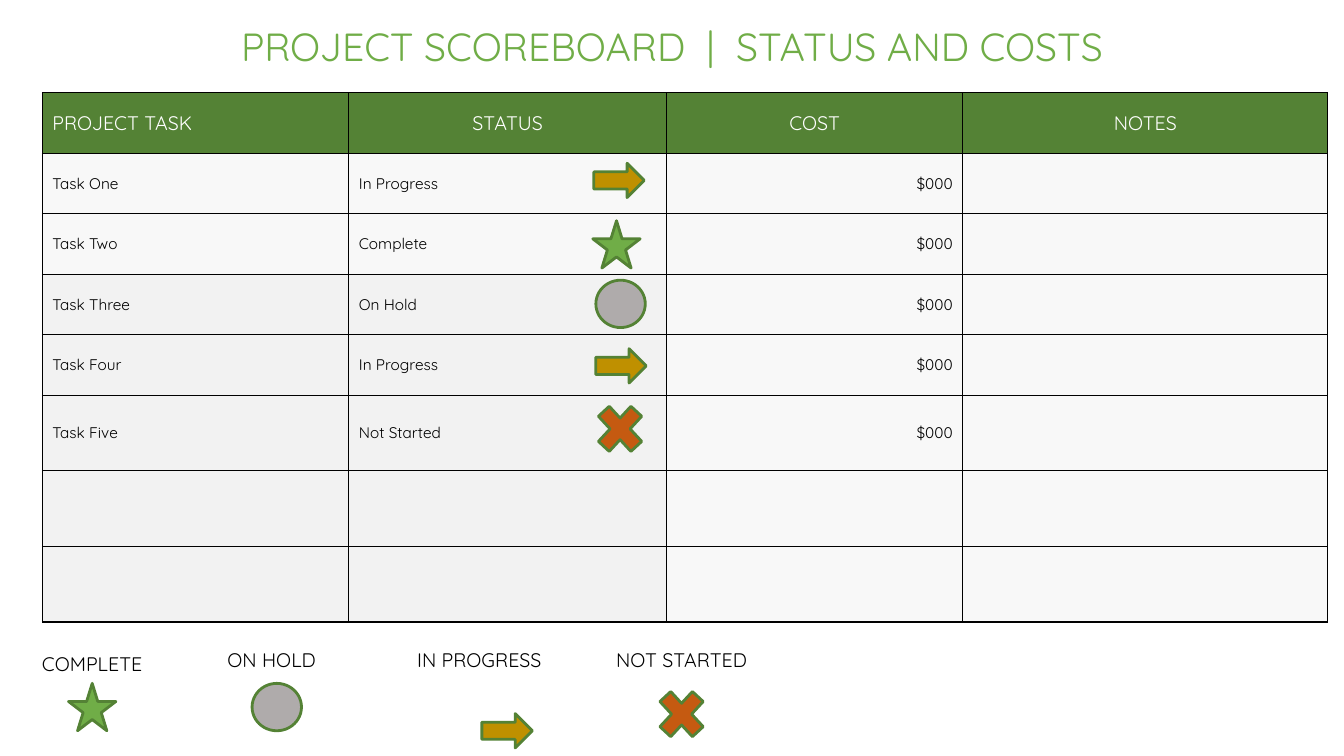
"""Build the project scoreboard slide with its task table and status legend."""
from dataclasses import dataclass
from typing import Any

from lxml.etree import SubElement
from pptx import Presentation
from pptx.dml.color import RGBColor
from pptx.enum.shapes import MSO_SHAPE
from pptx.enum.text import MSO_ANCHOR, MSO_AUTO_SIZE, PP_ALIGN
from pptx.oxml import parse_xml
from pptx.oxml.ns import nsdecls, qn
from pptx.util import Inches, Pt

COLORS = {
    "title": "70AD47", "header": "548235", "header_text": "FFFFFF", "text": "000000",
    "body": "F2F2F2", "border": "000000", "outline": "548235", "complete": "70AD47",
    "on_hold": "AFABAB", "in_progress": "BF9000", "not_started": "C55A11",
}
FONT = "Quicksand"
TABLE_LEFT, TABLE_TOP = 0.42, 0.92
COLUMN_WIDTHS = [3.04, 3.15, 2.94, 3.62]
ROW_HEIGHTS = [0.6] * 5 + [0.75] * 3
HEADINGS = ["PROJECT TASK", "STATUS", "COST", "NOTES"]
HEADING_ALIGNS = [PP_ALIGN.LEFT] + [PP_ALIGN.CENTER] * 3
BODY_ALIGNS = [PP_ALIGN.LEFT, PP_ALIGN.LEFT, PP_ALIGN.RIGHT, PP_ALIGN.LEFT]
FRAME_FORMAT = {
    "word_wrap": True, "auto_size": MSO_AUTO_SIZE.NONE, "vertical_anchor": MSO_ANCHOR.TOP,
    "margin_left": Inches(0.1), "margin_right": Inches(0.1),
    "margin_top": Inches(0.05), "margin_bottom": Inches(0.05),
}


@dataclass(frozen=True)
class Status:
    """A project status with its icon and its legend entry."""
    label: str
    icon: MSO_SHAPE
    color: str
    width: float
    height: float
    legend_box: tuple[float, float, float]
    legend_icon: tuple[float, float]


@dataclass(frozen=True)
class Task:
    """A task row with the position of its status icon."""
    name: str
    status: Status
    icon_at: tuple[float, float]
    cost: str = "$000"


COMPLETE = Status("Complete", MSO_SHAPE.STAR_5_POINT, "complete", 0.47, 0.47,
                  (0.25, 6.42, 1.33), (0.68, 6.78))
ON_HOLD = Status("On Hold", MSO_SHAPE.OVAL, "on_hold", 0.49, 0.47,
                 (2.03, 6.38, 1.33), (2.5, 6.78))
IN_PROGRESS = Status("In Progress", MSO_SHAPE.RIGHT_ARROW, "in_progress", 0.5, 0.34,
                     (3.81, 6.38, 1.89), (4.78, 7.08))
NOT_STARTED = Status("Not Started", MSO_SHAPE.MATH_MULTIPLY, "not_started", 0.62, 0.67,
                     (5.97, 6.38, 1.58), (6.45, 6.75))
STATUSES = [COMPLETE, ON_HOLD, IN_PROGRESS, NOT_STARTED]
TASKS = [
    Task("Task One", IN_PROGRESS, (5.89, 1.62)),
    Task("Task Two", COMPLETE, (5.88, 2.19)),
    Task("Task Three", ON_HOLD, (5.91, 2.78)),
    Task("Task Four", IN_PROGRESS, (5.91, 3.46)),
    Task("Task Five", NOT_STARTED, (5.84, 3.92)),
]


def rgb(name: str) -> RGBColor:
    """Return the named colour."""
    return RGBColor.from_string(COLORS[name])


def apply(target: Any, values: dict[str, Any]) -> None:
    """Set each format value on the target."""
    for attribute, value in values.items():
        setattr(target, attribute, value)


def write(frame: Any, text: str, size: int, color: str, align: PP_ALIGN) -> None:
    """Write one formatted line into a text frame."""
    line = frame.paragraphs[0]
    line.alignment = align
    run = line.add_run()
    run.text = text
    apply(run.font, {"name": FONT, "size": Pt(size), "bold": False})
    run.font.color.rgb = rgb(color)


def fill_cell(cell: Any, color: str, opacity: int) -> None:
    """Give a cell its fill, opacity and borders."""
    cell.vertical_anchor = MSO_ANCHOR.MIDDLE
    cell.fill.solid()
    cell.fill.fore_color.rgb = rgb(color)
    properties = cell._tc.get_or_add_tcPr()
    if opacity < 100:
        tint = properties.find(f".//{qn('a:srgbClr')}")
        SubElement(tint, qn("a:alpha"), val=str(opacity * 1000))
    for position, side in enumerate("LRTB"):
        properties.insert(position, parse_xml(
            f'<a:ln{side} {nsdecls("a")} w="{Pt(1)}"><a:solidFill>'
            f'<a:srgbClr val="{COLORS["border"]}"/></a:solidFill></a:ln{side}>'))


def add_scoreboard(slide: Any) -> None:
    """Add the task table."""
    scoreboard = slide.shapes.add_table(
        len(ROW_HEIGHTS), len(COLUMN_WIDTHS), Inches(TABLE_LEFT), Inches(TABLE_TOP),
        Inches(sum(COLUMN_WIDTHS)), Inches(sum(ROW_HEIGHTS))).table
    for column, width in zip(scoreboard.columns, COLUMN_WIDTHS):
        column.width = Inches(width)
    for row, height in zip(scoreboard.rows, ROW_HEIGHTS):
        row.height = Inches(height)
    entries = [HEADINGS] + [[task.name, task.status.label, task.cost, ""] for task in TASKS]
    entries += [[""] * len(HEADINGS)] * (len(ROW_HEIGHTS) - len(entries))
    for r, entry in enumerate(entries):
        heading = r == 0
        size, color = (14, "header_text") if heading else (11, "text")
        aligns = HEADING_ALIGNS if heading else BODY_ALIGNS
        for c, text in enumerate(entry):
            cell = scoreboard.cell(r, c)
            opacity = 100 if heading else 95 if r > 2 and c < 2 else 50
            fill_cell(cell, "header" if heading else "body", opacity)
            if text:
                write(cell.text_frame, text, size, color, aligns[c])


def add_icon(slide: Any, status: Status, at: tuple[float, float]) -> None:
    """Add a status icon at the given position."""
    icon = slide.shapes.add_shape(
        status.icon, *map(Inches, (*at, status.width, status.height)))
    icon.shadow.inherit = False
    icon.fill.solid()
    icon.fill.fore_color.rgb = rgb(status.color)
    icon.line.color.rgb = rgb("outline")
    icon.line.width = Pt(2)


def add_legend_entry(slide: Any, status: Status) -> None:
    """Add a legend label and its icon."""
    label = slide.shapes.add_textbox(*map(Inches, (*status.legend_box, 0.34)))
    apply(label.text_frame, FRAME_FORMAT)
    write(label.text_frame, status.label.upper(), 14, "text", PP_ALIGN.CENTER)
    add_icon(slide, status, status.legend_icon)


def main() -> None:
    """Build and save the slide."""
    deck = Presentation()
    apply(deck, {"slide_width": Inches(13.33), "slide_height": Inches(7.5)})
    slide = deck.slides.add_slide(deck.slide_layouts.get_by_name("Title Only"))
    title = slide.shapes.title
    apply(title, {"left": Inches(0), "top": Inches(0.17),
                  "width": Inches(13.33), "height": Inches(0.57)})
    apply(title.text_frame, FRAME_FORMAT)
    write(title.text_frame, "PROJECT SCOREBOARD  |  STATUS AND COSTS", 28, "title",
          PP_ALIGN.CENTER)
    add_scoreboard(slide)
    for status in STATUSES:
        add_legend_entry(slide, status)
    for task in TASKS:
        add_icon(slide, task.status, task.icon_at)
    deck.save("out.pptx")


if __name__ == "__main__":
    main()
